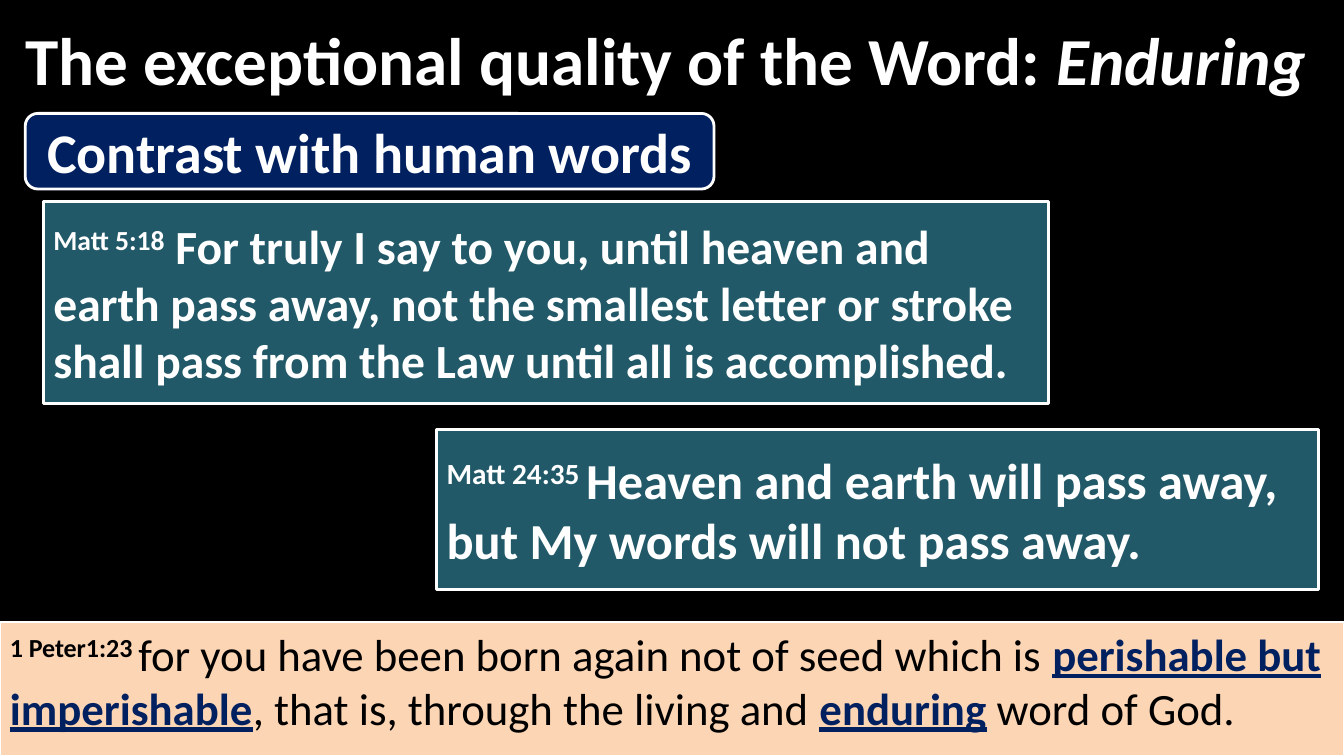
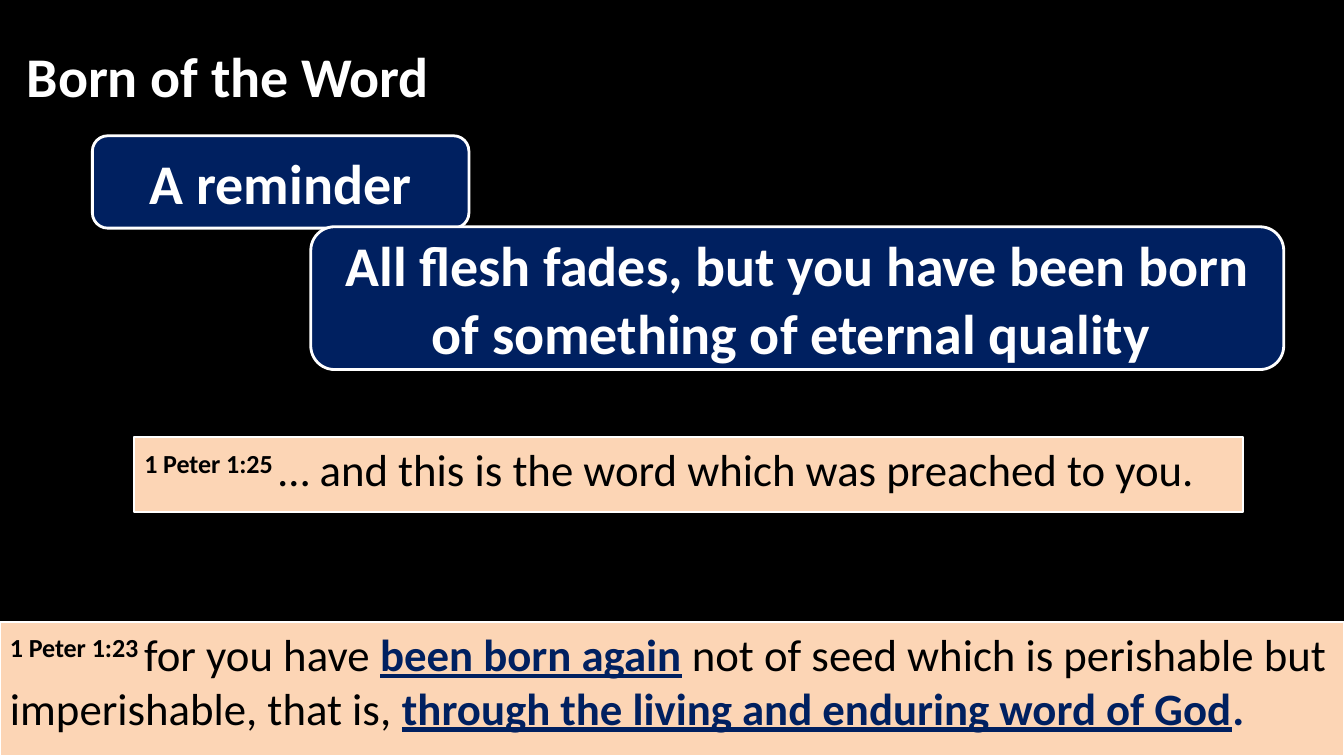
from pptx import Presentation
from pptx.dml.color import RGBColor as RGB
from pptx.enum.shapes import MSO_SHAPE as SHAPE
from pptx.enum.text import MSO_ANCHOR as ANCHOR, PP_ALIGN as ALIGN
from pptx.util import Pt

COLORS = {
    "black": "000000",
    "white": "FFFFFF",
    "navy": "002060",
    "teal": "215968",
    "peach": "FCD5B5",
}

BOXES = {
    "title": dict(shape=None, fill=None, line=0, color="white", bold=True,
                  anchor=ANCHOR.MIDDLE, align=ALIGN.LEFT),
    "point": dict(shape=SHAPE.ROUNDED_RECTANGLE, fill="navy", line=2, color="white", bold=True,
                  anchor=ANCHOR.MIDDLE, align=ALIGN.CENTER),
    "quote": dict(shape=SHAPE.RECTANGLE, fill="teal", line=2, color="white", bold=True,
                  anchor=ANCHOR.MIDDLE, align=ALIGN.LEFT),
    "verse": dict(shape=SHAPE.RECTANGLE, fill="peach", line=1.5, color="black", bold=False,
                  anchor=ANCHOR.TOP, align=ALIGN.LEFT),
}

RUNS = {
    "plain": {},
    "italic": {"italic": True},
    "ref": {"bold": True},
    "key": {"bold": True, "underline": True},
    "stop": {"bold": True},
}
RUN_COLORS = {"key": "navy", "stop": "navy"}
FOOTER = (0, 444, 960, 96)

SLIDES = [
    [
        ("title", (11, 6, 949, 72), 48, [
            ("The exceptional quality of the Word: ", "plain"),
            ("Enduring", "italic"),
        ]),
        ("verse", FOOTER, 32, [
            ("1 Peter1:23 ", "ref"),
            ("for you have been born again not of seed which is ", "plain"),
            ("perishable but imperishable", "key"),
            (", that is, through the living and ", "plain"),
            ("enduring", "key"),
            (" word of God.", "plain"),
        ]),
        ("quote", (31, 144, 718, 144), 34, [
            ("Matt 5:18", "ref"),
            (" For truly I say to you, until heaven and earth pass away, not the smallest "
             "letter or stroke shall pass from the Law until all is accomplished.", "plain"),
        ]),
        ("quote", (312, 307, 630, 114), 36, [
            ("Matt 24:35 ", "ref"),
            ("Heaven and earth will pass away, but My words will not pass away.", "plain"),
        ]),
        ("point", (18, 81, 492, 54), 40, [("Contrast with human words", "plain")]),
    ],
    [
        ("verse", FOOTER, 32, [
            ("1 Peter 1:23 ", "ref"),
            ("for you have ", "plain"),
            ("been born again", "key"),
            (" not of seed which is perishable but imperishable, that is, ", "plain"),
            ("through the living and enduring word of God", "key"),
            (".", "stop"),
        ]),
        ("verse", (96, 312, 792, 54), 32, [
            ("1 Peter 1:25 ", "ref"),
            ("… and this is the word which was preached to you.", "plain"),
        ]),
        ("point", (66, 97, 269, 66), 40, [("A reminder", "plain")]),
        ("point", (222, 162, 695, 102), 40, [
            ("All flesh fades, but you have been born of something of eternal quality ", "plain"),
        ]),
        ("title", (12, 18, 942, 72), 40, [("Born of the Word", "plain")]),
    ],
]


def rgb(name):
    return RGB.from_string(COLORS[name])


def add_box(s, kind, place, size, runs):
    box = BOXES[kind]
    at = [Pt(v) for v in place]
    if box["shape"] is None:
        sp = s.shapes.add_textbox(*at)
    else:
        sp = s.shapes.add_shape(box["shape"], *at)
        sp.shadow.inherit = False
        sp.fill.solid()
        sp.fill.fore_color.rgb = rgb(box["fill"])
        sp.line.color.rgb = rgb("white")
        sp.line.width = Pt(box["line"])
    tf = sp.text_frame
    tf.word_wrap = True
    tf.vertical_anchor = box["anchor"]
    p = tf.paragraphs[0]
    p.alignment = box["align"]
    for text, style in runs:
        r = p.add_run()
        r.text = text
        font = {"name": "Calibri", "size": Pt(size), "bold": box["bold"], **RUNS[style]}
        for key, value in font.items():
            setattr(r.font, key, value)
        r.font.color.rgb = rgb(RUN_COLORS.get(style, box["color"]))
        if style == "ref":
            r._r.get_or_add_rPr().set("baseline", "30000")


prs = Presentation()
prs.slide_width, prs.slide_height = Pt(960), Pt(540)

for boxes in SLIDES:
    s = prs.slides.add_slide(prs.slide_layouts[6])
    s.background.fill.solid()
    s.background.fill.fore_color.rgb = rgb("black")
    for box in boxes:
        add_box(s, *box)

prs.save("out.pptx")
